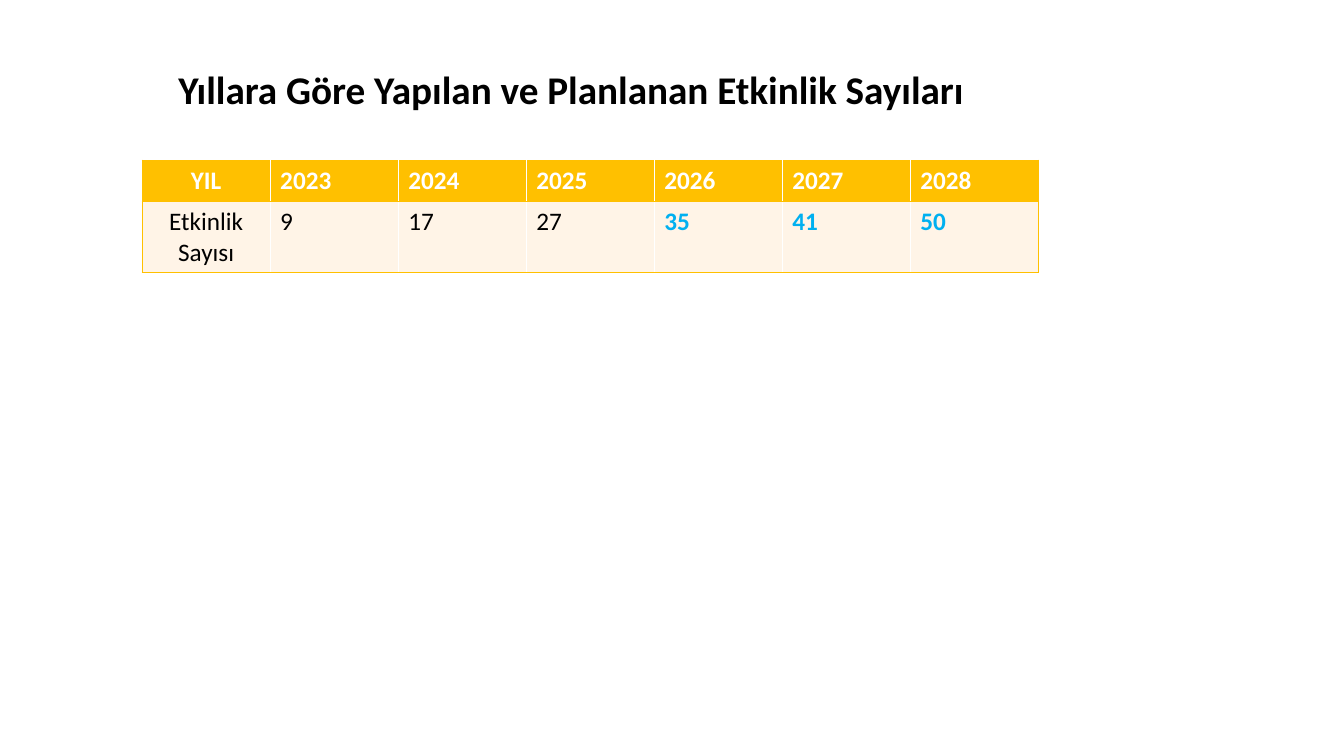
"""Build a slide with a table of yearly event counts."""
from lxml.etree import SubElement
from pptx import Presentation
from pptx.dml.color import RGBColor
from pptx.enum.text import MSO_ANCHOR, PP_ALIGN
from pptx.oxml.ns import qn
from pptx.util import Inches, Pt

GOLD, CREAM, WHITE, BLACK, BLUE = "FFC000", "FFF4E7", "FFFFFF", "000000", "00B0F0"
HEADINGS = ["YIL", "2023", "2024", "2025", "2026", "2027", "2028"]
COUNTS = ["Etkinlik Sayısı", "9", "17", "27", "35", "41", "50"]
FIRST_PLANNED = HEADINGS.index("2026")


def color(value):
    """Turn a hex string into a colour."""
    return RGBColor.from_string(value)


def write(frame, text, hue, **formats):
    """Write one formatted span into a text frame."""
    para = frame.paragraphs[0]
    span = para.add_run()
    span.text = text
    span.font.color.rgb = color(hue)
    for name, value in {"name": "Calibri", **formats}.items():
        setattr(span.font, name, value)
    return para


def add_title(page, text):
    """Add the slide title."""
    box = page.shapes.add_textbox(Inches(1.67), Inches(0.4), Inches(9.03), Inches(1.02))
    frame = box.text_frame
    frame.word_wrap = True
    frame.vertical_anchor = MSO_ANCHOR.MIDDLE
    para = write(frame, text, BLACK, size=Pt(28), bold=True)
    para.line_spacing = 0.9


def add_borders(cell, sides):
    """Draw gold lines on the given sides of a cell."""
    properties = cell._tc.get_or_add_tcPr()
    for side in sides:
        line = SubElement(properties, qn(f"a:ln{side}"), w=str(Pt(1)))
        fill = SubElement(line, qn("a:solidFill"))
        SubElement(fill, qn("a:srgbClr"), val=GOLD)


def fill_cell(cell, text, background, hue, bold, sides):
    """Give a cell its borders, fill and text."""
    add_borders(cell, sides)
    cell.fill.solid()
    cell.fill.fore_color.rgb = color(background)
    return write(cell.text_frame, text, hue, size=Pt(18), bold=bold)


def add_event_table(page):
    """Add the table of events per year."""
    last = len(HEADINGS) - 1
    frame = page.shapes.add_table(2, len(HEADINGS), Inches(1.41), Inches(1.59),
                                  Inches(8.89), Inches(1.11))
    table = frame.table
    for row, height in zip(table.rows, (0.41, 0.7)):
        row.height = Inches(height)
    for index, (heading, count) in enumerate(zip(HEADINGS, COUNTS)):
        table.columns[index].width = Inches(1.27)
        sides = {0: "LTB", last: "RTB"}.get(index, "TB")
        planned = index >= FIRST_PLANNED
        paras = [
            fill_cell(table.cell(0, index), heading, GOLD, WHITE, True, sides),
            fill_cell(table.cell(1, index), count, CREAM,
                      BLUE if planned else BLACK, planned, sides),
        ]
        for para in paras:
            para.alignment = PP_ALIGN.LEFT if index else PP_ALIGN.CENTER


def main():
    """Build and save the deck."""
    deck = Presentation()
    deck.slide_width, deck.slide_height = Inches(13.33), Inches(7.5)
    page = deck.slides.add_slide(deck.slide_layouts[6])
    add_title(page, "Yıllara Göre Yapılan ve Planlanan Etkinlik Sayıları")
    add_event_table(page)
    deck.save("out.pptx")


if __name__ == "__main__":
    main()
